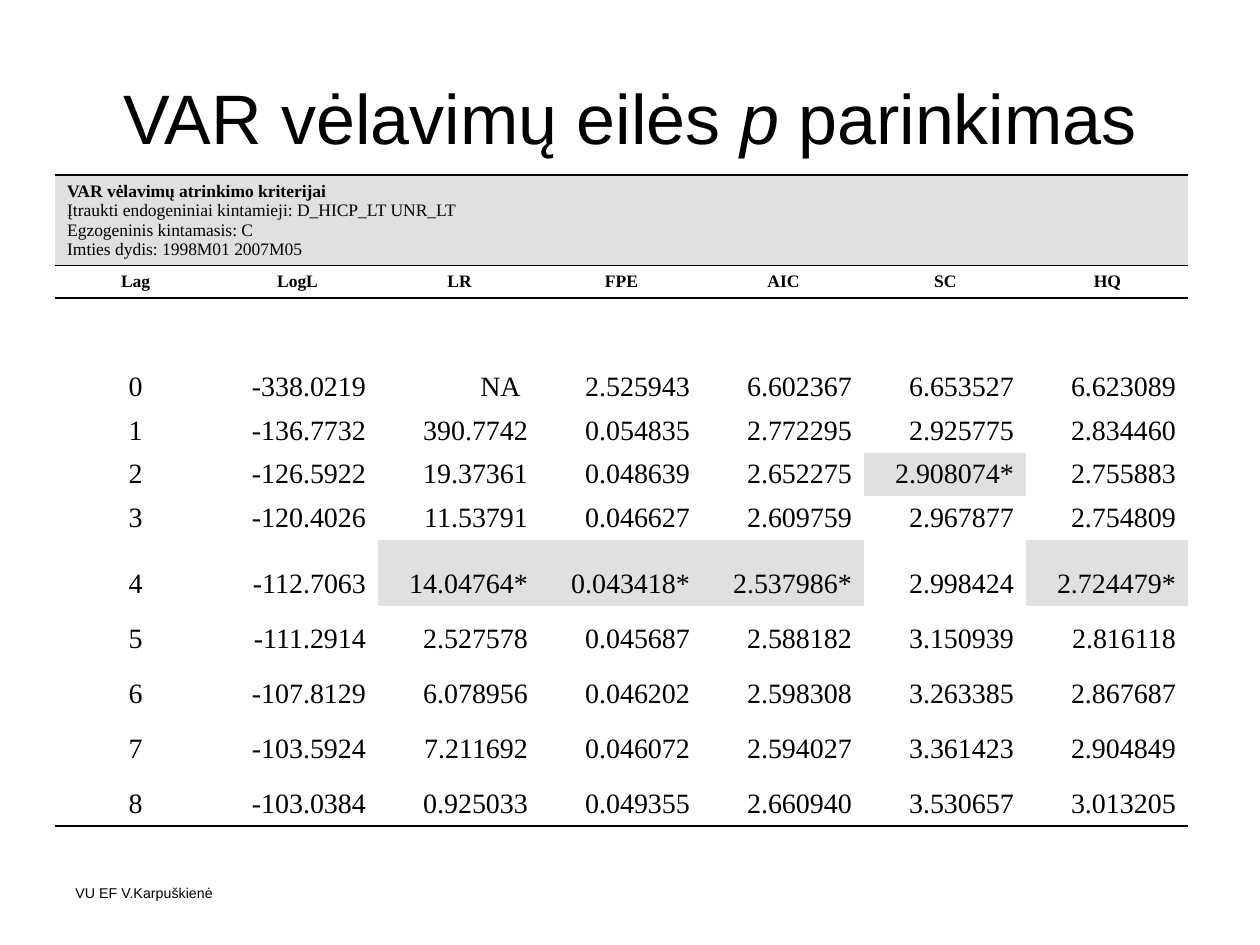
from lxml.etree import SubElement
from pptx import Presentation
from pptx.dml.color import RGBColor
from pptx.enum.text import MSO_ANCHOR, MSO_AUTO_SIZE, PP_ALIGN
from pptx.oxml.ns import qn
from pptx.util import Cm, Pt

# Content
TITLE = [("VAR vėlavimų eilės ", False), ("p", True), (" parinkimas", False)]
FOOT = "VU EF V.Karpuškienė"
INTRO = [
    "VAR vėlavimų atrinkimo kriterijai",
    "Įtraukti endogeniniai kintamieji: D_HICP_LT UNR_LT",
    "Egzogeninis kintamasis: C",
    "Imties dydis: 1998M01 2007M05",
]
HEADS = ["Lag", "LogL", "LR", "FPE", "AIC", "SC", "HQ"]
ROWS = [
    ["0", "-338.0219", "NA", "2.525943", "6.602367", "6.653527", "6.623089"],
    ["1", "-136.7732", "390.7742", "0.054835", "2.772295", "2.925775", "2.834460"],
    ["2", "-126.5922", "19.37361", "0.048639", "2.652275", "2.908074*", "2.755883"],
    ["3", "-120.4026", "11.53791", "0.046627", "2.609759", "2.967877", "2.754809"],
    ["4", "-112.7063", "14.04764*", "0.043418*", "2.537986*", "2.998424", "2.724479*"],
    ["5", "-111.2914", "2.527578", "0.045687", "2.588182", "3.150939", "2.816118"],
    ["6", "-107.8129", "6.078956", "0.046202", "2.598308", "3.263385", "2.867687"],
    ["7", "-103.5924", "7.211692", "0.046072", "2.594027", "3.361423", "2.904849"],
    ["8", "-103.0384", "0.925033", "0.049355", "2.660940", "3.530657", "3.013205"],
]

# Look
SANS, SERIF = "Arial", "Times New Roman"
INK, GREY = "000000", "E0E0E0"
NO_GRID = "{2D5ABB26-0587-4C30-8999-92F81FD0307C}"
HIGH = [1.8, 0.65, 1.36] + [0.88] * 4 + [1.33] + [1.11] * 4
WIDE = 22.86


def tint(code):
    return RGBColor.from_string(code)


def write(para, text, size=16, font=SERIF, bold=False, slant=False, align=PP_ALIGN.LEFT):
    para.alignment = align
    run = para.add_run()
    run.text = text
    face = run.font
    face.name, face.size, face.bold, face.italic = font, Pt(size), bold, slant
    face.color.rgb = tint(INK)


def rule(cell, top=False, base=False):
    props = cell._tc.get_or_add_tcPr()
    for spot, (side, on) in enumerate([("lnT", top), ("lnB", base)]):
        line = SubElement(props, qn("a:" + side), w=str(Pt(1)))
        if on:
            fill = SubElement(line, qn("a:solidFill"))
            SubElement(fill, qn("a:srgbClr"), val=INK)
        else:
            SubElement(line, qn("a:noFill"))
        props.insert(spot, line)  # borders come before the fill


def shade(cell, on):
    if on:
        cell.fill.solid()
        cell.fill.fore_color.rgb = tint(GREY)
    else:
        cell.fill.background()


def main():
    deck = Presentation()
    deck.slide_width, deck.slide_height = Cm(25.4), Cm(19.05)
    slide = deck.slides.add_slide(deck.slide_layouts[5])

    # Title
    head = slide.shapes.title
    head.left, head.top, head.width, head.height = Cm(1.27), Cm(0.76), Cm(WIDE), Cm(3.18)
    frame = head.text_frame
    frame.auto_size = MSO_AUTO_SIZE.NONE
    frame.vertical_anchor = MSO_ANCHOR.MIDDLE
    for text, slant in TITLE:
        write(frame.paragraphs[0], text, size=40, font=SANS, slant=slant, align=PP_ALIGN.CENTER)

    # Footer
    frame = slide.shapes.add_textbox(Cm(1.27), Cm(17.34), Cm(5.92), Cm(1.32)).text_frame
    frame.word_wrap = True
    frame.vertical_anchor = MSO_ANCHOR.MIDDLE
    write(frame.paragraphs[0], FOOT, size=8.1, font=SANS)

    # Table grid
    count = len(HEADS)
    shape = slide.shapes.add_table(len(HIGH), count, Cm(1.1), Cm(3.53), Cm(WIDE), Cm(sum(HIGH)))
    grid = shape.table
    grid.first_row = grid.horz_banding = False
    grid._tbl.tblPr.find(qn("a:tableStyleId")).text = NO_GRID
    for row, high in zip(grid.rows, HIGH):
        row.height = Cm(high)
    for col in grid.columns:
        col.width = Cm(WIDE / count)
    for cell in grid.iter_cells():
        cell.vertical_anchor = MSO_ANCHOR.BOTTOM
        cell.margin_top = 0

    # Introduction across all columns
    top = grid.cell(0, 0)
    top.merge(grid.cell(0, count - 1))
    for i, text in enumerate(INTRO):
        para = top.text_frame.add_paragraph() if i else top.text_frame.paragraphs[0]
        write(para, text, size=10, bold=i == 0)

    # Headings, an empty row, then the figures
    body = [HEADS, [""] * count] + ROWS
    for r, line in enumerate(body, 1):
        for c, text in enumerate(line):
            cell = grid.cell(r, c)
            shade(cell, text.endswith("*"))
            if text == "NA":
                cell.margin_right = Cm(0.4)
            if not text:
                continue
            mid = r == 1 or c == 0
            write(cell.text_frame.paragraphs[0], text, size=10 if r == 1 else 16, bold=r == 1,
                  align=PP_ALIGN.CENTER if mid else PP_ALIGN.RIGHT)

    # Shading and rules
    for c in range(count):
        shade(grid.cell(0, c), True)
        for r in (0, 1):
            rule(grid.cell(r, c), top=True, base=True)
        rule(grid.cell(2, c), top=True)
        rule(grid.cell(len(body), c), base=True)

    deck.save("out.pptx")


if __name__ == "__main__":
    main()
